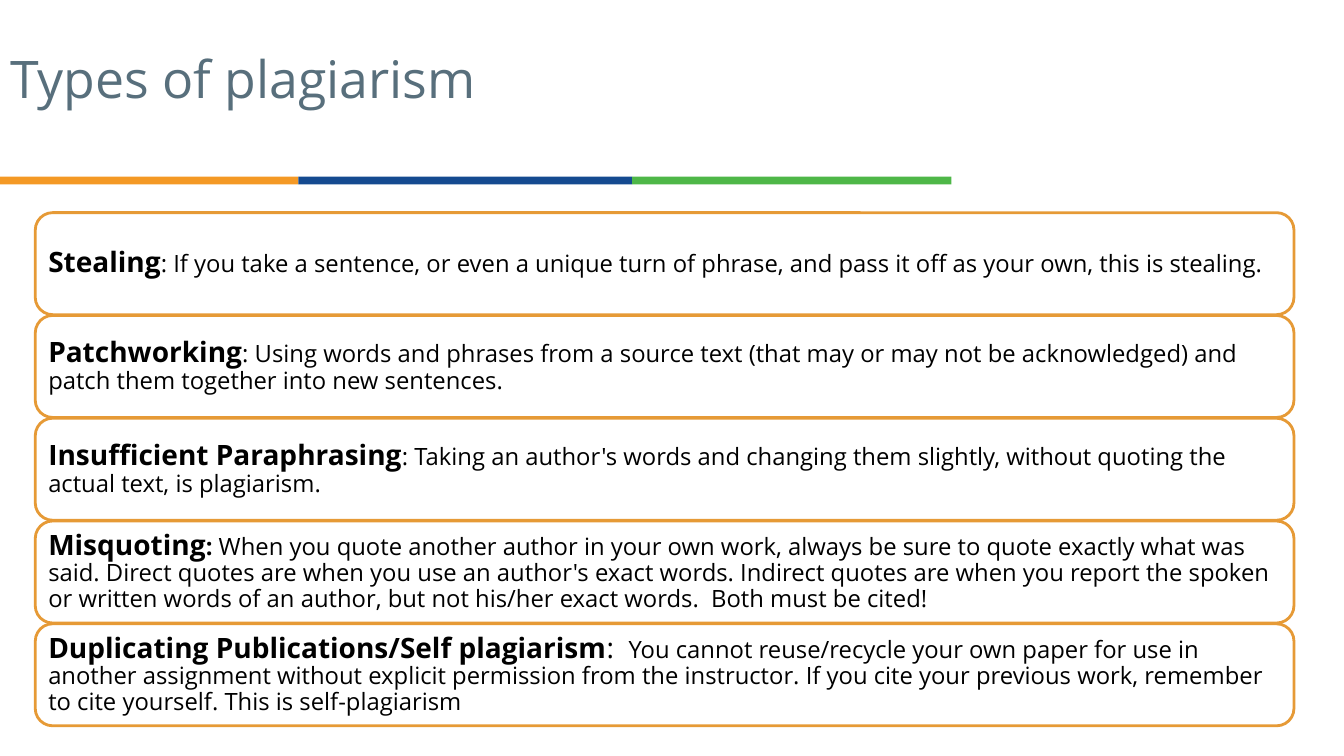
from pptx import Presentation
from pptx.dml.color import RGBColor
from pptx.enum.shapes import MSO_SHAPE
from pptx.enum.text import MSO_ANCHOR, MSO_AUTO_SIZE, PP_ALIGN
from pptx.util import Cm, Pt


def paint(target, color):
    target.solid()
    target.fore_color.rgb = RGBColor.from_string(color)


def style(font, size, color, bold=False):
    font.name = "Open Sans"
    font.size = Pt(size)
    font.bold = bold
    paint(font.fill, color)


deck = Presentation()
deck.slide_width = Cm(33.87)
deck.slide_height = Cm(19.05)
slide = deck.slides.add_slide(deck.slide_layouts[5])
paint(slide.background.fill, "FFFFFF")

left = 0
for width, color in [(7.52, "F49925"), (8.41, "154A90"), (8.05, "4EB748")]:
    bar = slide.shapes.add_shape(
        MSO_SHAPE.RECTANGLE, Cm(left), Cm(4.45), Cm(width), Cm(0.2))
    bar.shadow.inherit = False
    paint(bar.fill, color)
    bar.line.fill.background()
    left += width

title = slide.shapes.title
title.left, title.top = Cm(0), Cm(1.22)
title.width, title.height = Cm(22.61), Cm(3)
title.text = "Types of plagiarism"
frame = title.text_frame
frame.word_wrap = True
frame.auto_size = MSO_AUTO_SIZE.NONE
frame.vertical_anchor = MSO_ANCHOR.TOP
head = frame.paragraphs[0]
head.alignment = PP_ALIGN.LEFT
head.line_spacing = 0.9
style(head.font, 37, "586F7C")

types = [
    [("Stealing", 20, True),
     (": If you take a sentence, or even a unique turn of phrase, and pass "
      "it off as your own, this is stealing.", 17, False)],
    [("Patchworking", 20, True),
     (": Using words and phrases from a source text (that may or may not be "
      "acknowledged) and patch them together into new sentences.", 17, False)],
    [("Insufficient Paraphrasing", 20, True),
     (": Taking an author's words and changing them slightly, without "
      "quoting the actual text, is plagiarism.", 17, False)],
    [("Misquoting", 20, True),
     (":", 17, True),
     (" When you quote another author in your own work, always be sure to "
      "quote exactly what was said. Direct quotes are when you use an "
      "author's exact words. Indirect quotes are when you report the spoken "
      "or written words of an author, but not his/her exact words.  Both "
      "must be cited!", 17, False)],
    [("Duplicating Publications/Self plagiarism", 20, True),
     (":  ", 20, False),
     ("You cannot reuse/recycle your own paper for use in another assignment "
      "without explicit permission from the instructor. If you cite your "
      "previous work, remember to cite yourself. This is self-plagiarism",
      17, False)],
]

for row, parts in enumerate(types):
    card = slide.shapes.add_shape(
        MSO_SHAPE.ROUNDED_RECTANGLE,
        Cm(0.89), Cm(5.36 + 2.59 * row), Cm(31.72), Cm(2.57))
    card.adjustments[0] = 0.17
    card.shadow.inherit = False
    paint(card.fill, "FFFFFF")
    paint(card.line.fill, "E69A36")
    card.line.width = Pt(2)
    frame = card.text_frame
    frame.word_wrap = True
    frame.vertical_anchor = MSO_ANCHOR.MIDDLE
    frame.margin_left = frame.margin_right = Cm(0.2)
    frame.margin_top = frame.margin_bottom = Cm(0.2)
    para = frame.paragraphs[0]
    para.alignment = PP_ALIGN.LEFT
    para.line_spacing = 0.9
    for text, size, bold in parts:
        run = para.add_run()
        run.text = text
        style(run.font, size, "000000", bold)

deck.save("out.pptx")
